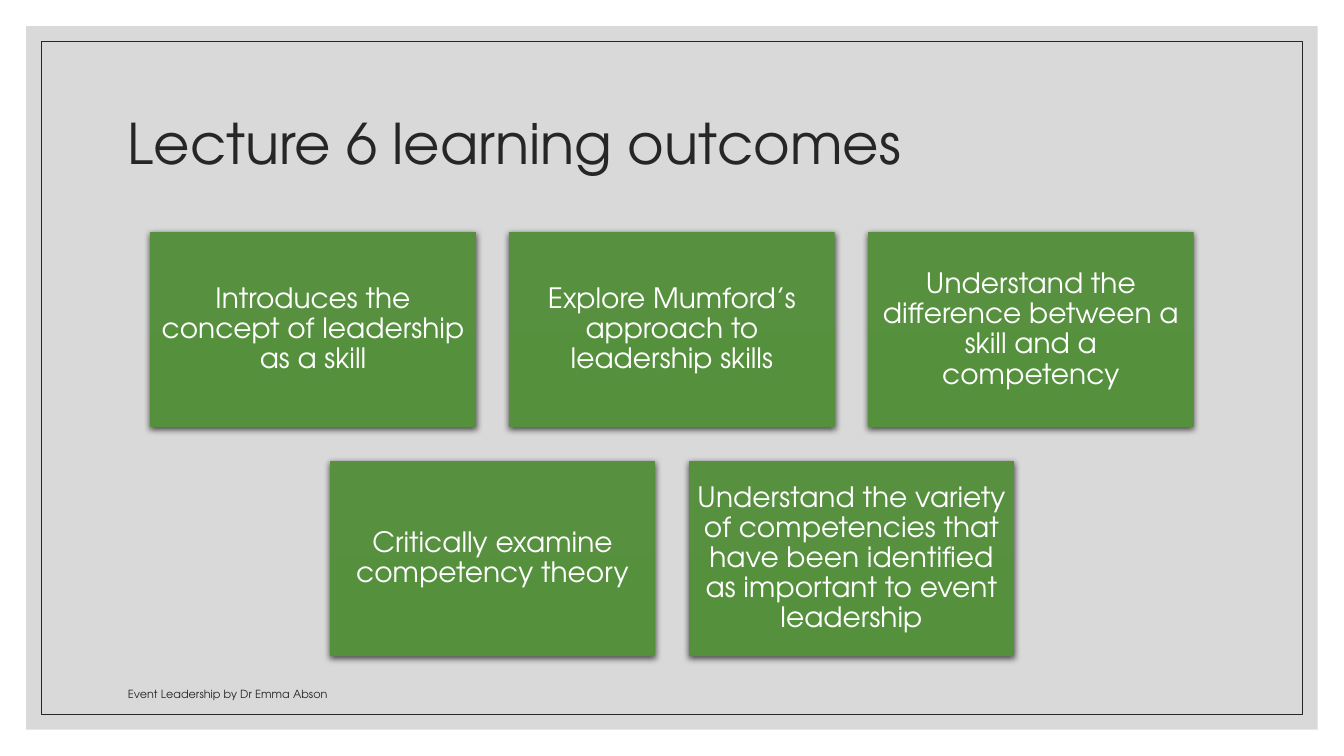
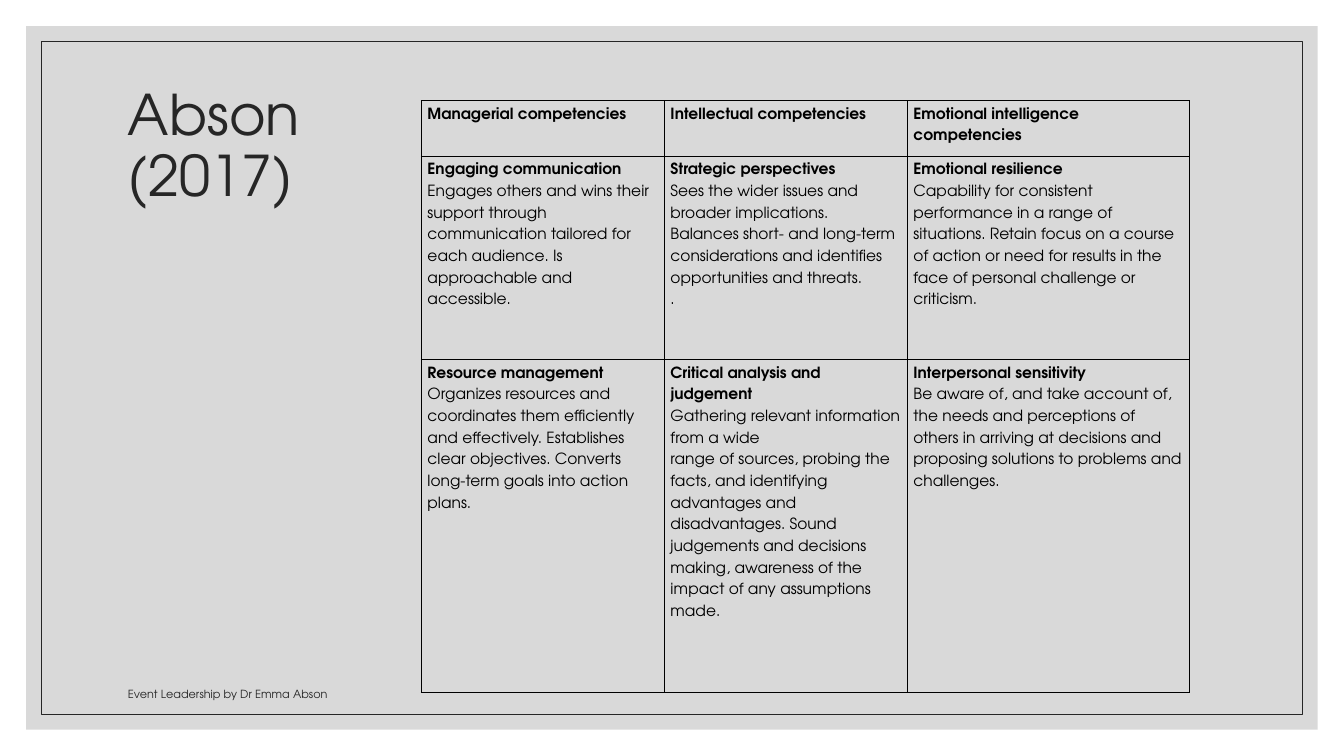
from dataclasses import dataclass

from lxml.etree import SubElement
from pptx import Presentation
from pptx.dml.color import RGBColor
from pptx.enum.shapes import MSO_SHAPE
from pptx.enum.text import MSO_ANCHOR, PP_ALIGN
from pptx.oxml import parse_xml
from pptx.oxml.ns import nsdecls, qn
from pptx.util import Inches, Pt


@dataclass(frozen=True)
class Theme:
    face: str = "TeX Gyre Adventor"
    ink: str = "262626"
    panel: str = "D9D9D9"
    top: str = "57903F"
    base: str = "55913C"
    white: str = "FFFFFF"
    black: str = "000000"
    title: int = 40
    card: int = 20
    cell: int = 11
    foot: int = 8


THEME = Theme()
WIDE, HIGH = 13.33, 7.5
FOOTER = "Event Leadership by Dr Emma Abson"

GOALS = {
    "title": "Lecture 6 learning outcomes",
    "area": (1.17, 0.7, 11, 1.5),
    "rows": [
        [
            "Introduces the concept of leadership as a skill",
            "Explore Mumford’s approach to leadership skills",
            "Understand the difference between a skill and a competency",
        ],
        [
            "Critically examine competency theory",
            "Understand the variety of competencies that have been identified "
            "as important to event leadership",
        ],
    ],
}
CARD = {"wide": 3.23, "high": 1.94, "gap": 0.33, "top": 2.3}

# Each cell is a bold heading followed by plain paragraphs.
MODEL = {
    "title": "Abson (2017)",
    "area": (1.17, 0.7, 2.28, 1.53),
    "left": 4.18,
    "top": 1,
    "cols": [2.41, 2.41, 2.8],
    "highs": [0.5, 2.02, 3.05],
    "rows": [
        [
            ["Managerial competencies"],
            ["Intellectual competencies"],
            ["Emotional intelligence competencies"],
        ],
        [
            [
                "Engaging communication",
                "Engages others and wins their support through communication "
                "tailored for each audience. Is approachable and accessible.",
            ],
            [
                "Strategic perspectives",
                "Sees the wider issues and broader implications. Balances short- "
                "and long-term considerations and identifies opportunities and threats.",
                ".",
            ],
            [
                "Emotional resilience",
                "Capability for consistent performance in a range of situations. "
                "Retain focus on a course of action or need for results in the "
                "face of personal challenge or criticism.",
            ],
        ],
        [
            [
                "Resource management",
                "Organizes resources and coordinates them efficiently and "
                "effectively. Establishes clear objectives. Converts long-term "
                "goals into action",
                "plans.",
            ],
            [
                "Critical analysis and judgement",
                "Gathering relevant information from a wide",
                "range of sources, probing the facts, and identifying advantages "
                "and disadvantages. Sound judgements and decisions making, "
                "awareness of the impact of any assumptions made.",
            ],
            [
                "Interpersonal sensitivity",
                "Be aware of, and take account of, the needs and perceptions of "
                "others in arriving at decisions and proposing solutions to "
                "problems and challenges.",
            ],
        ],
    ],
}


def rgb(code):
    return RGBColor.from_string(code)


def style(item, values):
    for name, value in values.items():
        setattr(item, name, value)


def write(frame, lines, size, color, bold=False, **form):
    """Fill a text frame; bold applies to the first line only."""
    frame.word_wrap = True
    for i, line in enumerate(lines):
        para = frame.paragraphs[0] if i == 0 else frame.add_paragraph()
        run = para.add_run()
        run.text = line
        style(para, form)
        style(run.font, {"name": THEME.face, "size": Pt(size), "bold": bold and i == 0})
        run.font.color.rgb = rgb(color)


def add_rect(slide, area):
    rect = slide.shapes.add_shape(MSO_SHAPE.RECTANGLE, *map(Inches, area))
    rect.shadow.inherit = False
    return rect


def add_text(slide, area, text, size, anchor, **form):
    box = slide.shapes.add_textbox(*map(Inches, area))
    box.text_frame.vertical_anchor = anchor
    write(box.text_frame, [text], size, THEME.ink, **form)


def add_page(deck, data):
    """Add a slide with the shared panel, frame, title and footer."""
    slide = deck.slides.add_slide(deck.slide_layouts[6])
    panel, frame = [
        add_rect(slide, (inset, inset, WIDE - 2 * inset, HIGH - 2 * inset))
        for inset in (0.26, 0.41)
    ]
    panel.fill.solid()
    panel.fill.fore_color.rgb = rgb(THEME.panel)
    panel.line.fill.background()
    frame.fill.background()
    frame.line.color.rgb = rgb(THEME.ink)
    frame.line.width = Pt(0.5)
    add_text(slide, data["area"], data["title"], THEME.title,
             MSO_ANCHOR.MIDDLE, line_spacing=0.9)
    add_text(slide, (1.17, 6.6, 6.36, 0.4), FOOTER, THEME.foot, MSO_ANCHOR.BOTTOM)
    return slide


def add_shade(shape):
    """Give a shape a soft shadow straight below it."""
    effects = shape._element.spPr.find(qn("a:effectLst"))
    shade = SubElement(effects, qn("a:outerShdw"), blurRad=str(Pt(4.5)),
                       dist=str(Pt(1.5)), dir="5400000", algn="ctr", rotWithShape="0")
    color = SubElement(shade, qn("a:srgbClr"), val=THEME.black)
    SubElement(color, qn("a:alpha"), val="63000")


def add_card(slide, area, text):
    card = add_rect(slide, area)
    card.fill.gradient()
    card.fill.gradient_angle = 270
    for stop, code in zip(card.fill.gradient_stops, (THEME.top, THEME.base)):
        stop.color.rgb = rgb(code)
    card.line.fill.background()
    add_shade(card)
    frame = card.text_frame
    sides = ("left", "right", "top", "bottom")
    style(frame, {f"margin_{side}": Inches(0.08) for side in sides})
    frame.vertical_anchor = MSO_ANCHOR.MIDDLE
    write(frame, [text], THEME.card, THEME.white,
          alignment=PP_ALIGN.CENTER, line_spacing=0.9)


def add_cards(slide, rows):
    """Lay out each row of cards centred on the slide."""
    wide, high, gap = CARD["wide"], CARD["high"], CARD["gap"]
    for r, row in enumerate(rows):
        left = (WIDE - len(row) * (wide + gap) + gap) / 2
        top = CARD["top"] + r * (high + gap)
        for c, text in enumerate(row):
            add_card(slide, (left + c * (wide + gap), top, wide, high), text)


def add_edges(cell):
    props = cell._tc.get_or_add_tcPr()
    for i, side in enumerate("LRTB"):
        props.insert(i, parse_xml(
            f'<a:ln{side} {nsdecls("a")} w="{Pt(1)}"><a:solidFill>'
            f'<a:srgbClr val="{THEME.black}"/></a:solidFill></a:ln{side}>'))


def add_grid(slide, data):
    cols, highs = data["cols"], data["highs"]
    area = data["left"], data["top"], sum(cols), sum(highs)
    table = slide.shapes.add_table(len(highs), len(cols), *map(Inches, area)).table
    style(table, {"first_row": False, "horz_banding": False})
    for col, wide in zip(table.columns, cols):
        col.width = Inches(wide)
    for row, high, texts in zip(table.rows, highs, data["rows"]):
        row.height = Inches(high)
        for cell, lines in zip(row.cells, texts):
            cell.fill.background()
            style(cell, {"margin_left": Inches(0.06), "margin_right": Inches(0.06),
                         "margin_top": 0, "margin_bottom": 0})
            add_edges(cell)
            write(cell.text_frame, lines, THEME.cell, THEME.black,
                  bold=True, line_spacing=1.5)


def main():
    deck = Presentation()
    style(deck, {"slide_width": Inches(WIDE), "slide_height": Inches(HIGH)})
    add_cards(add_page(deck, GOALS), GOALS["rows"])
    add_grid(add_page(deck, MODEL), MODEL)
    deck.save("out.pptx")


if __name__ == "__main__":
    main()
